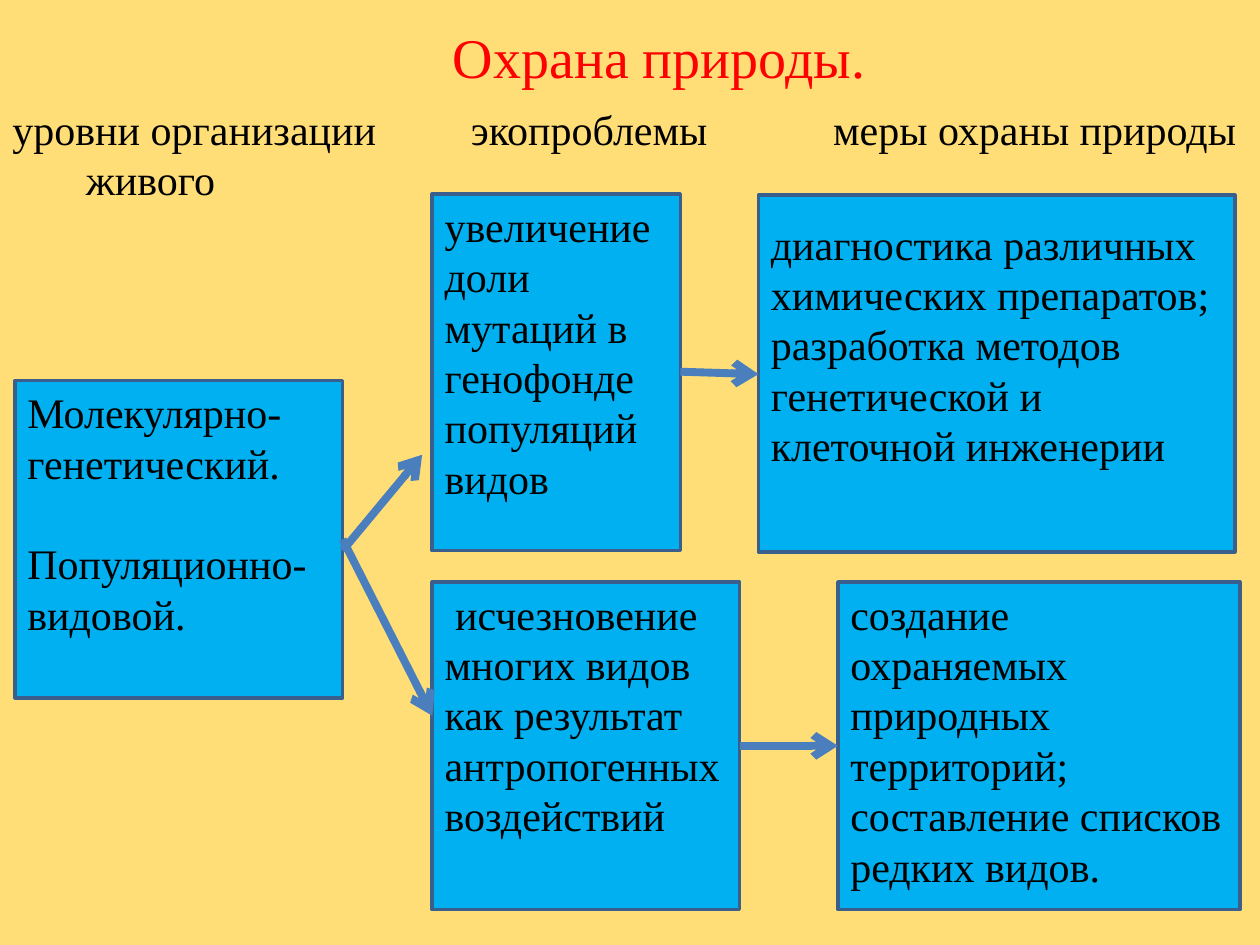
"""Build a slide linking levels of life, ecological problems and conservation measures."""
from dataclasses import dataclass

from lxml import etree
from pptx import Presentation
from pptx import util as u
from pptx.dml.color import RGBColor
from pptx.enum import shapes, text
from pptx.oxml import ns

FONT = "Times New Roman"
BACKGROUND, BOX_FILL, BOX_LINE, ARROW = "FFDE78", "00B0F0", "3A5F8C", "4B7EBC"
BLACK, RED = "000000", "FF0000"
TEXT_SIZE, TITLE_SIZE, LINE_HEIGHT = 24, 32, 28.8
LEFT_COLUMN, MIDDLE_COLUMN, BOTTOM_ROW = 8.6, 247, 332.6


@dataclass
class Para:
    words: str
    gap_before: float = 0
    left_indent: float = 0
    first_indent: float = 0


@dataclass
class Box:
    left: float
    top: float
    width: float
    height: float
    paras: list[Para]
    top_inset: float = 3.6


@dataclass
class Arrow:
    start: tuple[float, float]
    end: tuple[float, float]


HEADINGS = [
    Box(0, 55.4, 240, 65.5, [Para("уровни организации"), Para("живого", left_indent=42)]),
    Box(262, 55.4, 160, 36, [Para("экопроблемы")]),
    Box(469, 55.4, 251, 36, [Para("меры охраны природы")]),
]

BOXES = [
    Box(LEFT_COLUMN, 217.4, 187.2, 181.4, [
        Para("Молекулярно-"),
        Para("генетический."),
        Para("Популяционно-видовой.", gap_before=LINE_HEIGHT),
    ]),
    Box(MIDDLE_COLUMN, 110.9, 141.8, 203.8, [
        Para("увеличение доли мутаций в генофонде популяций видов"),
    ]),
    Box(MIDDLE_COLUMN, BOTTOM_ROW, 175.7, 187.2, [
        Para("исчезновение многих видов как результат антропогенных воздействий",
             first_indent=6),
    ]),
    Box(433.4, 111.6, 272.2, 203.8, [
        Para("диагностика различных химических препаратов;"),
        Para("разработка методов генетической и клеточной инженерии"),
    ], top_inset=13),
    Box(478.8, BOTTOM_ROW, 229.7, 187.2, [
        Para("создание охраняемых природных территорий;"),
        Para("составление списков редких видов."),
    ]),
]

ARROWS = [
    Arrow((195.8, 314.6), (241.2, 259.9)),
    Arrow((195.8, 308.2), (247, 409)),
    Arrow((388.8, 212.4), (433.4, 213.8)),
    Arrow((422.7, 426.2), (478.8, 426.2)),
]


def color(value: str) -> RGBColor:
    return RGBColor.from_string(value)


def set_font(para, size: float, value: str) -> None:
    para.font.name = FONT
    para.font.size = u.Pt(size)
    para.font.color.rgb = color(value)


def write(shape, box: Box) -> None:
    frame = shape.text_frame
    frame.word_wrap = True
    frame.vertical_anchor = text.MSO_ANCHOR.TOP
    frame.margin_top = u.Pt(box.top_inset)
    for index, item in enumerate(box.paras):
        para = frame.add_paragraph() if index else frame.paragraphs[0]
        para.text = item.words
        para.alignment = text.PP_ALIGN.LEFT
        para.space_before = u.Pt(item.gap_before)
        set_font(para, TEXT_SIZE, BLACK)
        properties = para._p.get_or_add_pPr()
        properties.set("marL", str(u.Pt(item.left_indent)))
        properties.set("indent", str(u.Pt(item.first_indent)))


def frame_of(box: Box) -> list[u.Length]:
    return [u.Pt(value) for value in (box.left, box.top, box.width, box.height)]


def add_heading(page, box: Box) -> None:
    write(page.shapes.add_textbox(*frame_of(box)), box)


def add_box(page, box: Box) -> None:
    shape = page.shapes.add_shape(shapes.MSO_SHAPE.RECTANGLE, *frame_of(box))
    shape.shadow.inherit = False
    shape.fill.solid()
    shape.fill.fore_color.rgb = color(BOX_FILL)
    shape.line.color.rgb = color(BOX_LINE)
    shape.line.width = u.Pt(2)
    write(shape, box)


def add_arrow(page, arrow: Arrow) -> None:
    ends = [u.Pt(value) for value in (*arrow.start, *arrow.end)]
    line = page.shapes.add_connector(shapes.MSO_CONNECTOR.STRAIGHT, *ends)
    line.line.color.rgb = color(ARROW)
    line.line.width = u.Pt(4.5)
    etree.SubElement(line.line._get_or_add_ln(), ns.qn("a:tailEnd"), type="arrow")
    etree.SubElement(line._element.spPr, ns.qn("a:effectLst"))


def add_title(page, words: str) -> None:
    title = page.shapes.title
    title.left, title.top, title.width, title.height = map(u.Pt, (48, 9.4, 657.6, 46))
    frame = title.text_frame
    frame.text = words
    frame.word_wrap = True
    frame.auto_size = text.MSO_AUTO_SIZE.NONE
    frame.vertical_anchor = text.MSO_ANCHOR.TOP
    para = frame.paragraphs[0]
    para.alignment = text.PP_ALIGN.CENTER
    set_font(para, TITLE_SIZE, RED)


def main() -> None:
    deck = Presentation()
    deck.slide_width, deck.slide_height = u.Pt(720), u.Pt(540)
    page = deck.slides.add_slide(deck.slide_layouts.get_by_name("Title Only"))
    page.background.fill.solid()
    page.background.fill.fore_color.rgb = color(BACKGROUND)
    add_title(page, "Охрана природы.")
    for heading in HEADINGS:
        add_heading(page, heading)
    for box in BOXES:
        add_box(page, box)
    for arrow in ARROWS:
        add_arrow(page, arrow)
    deck.save("out.pptx")


if __name__ == "__main__":
    main()
